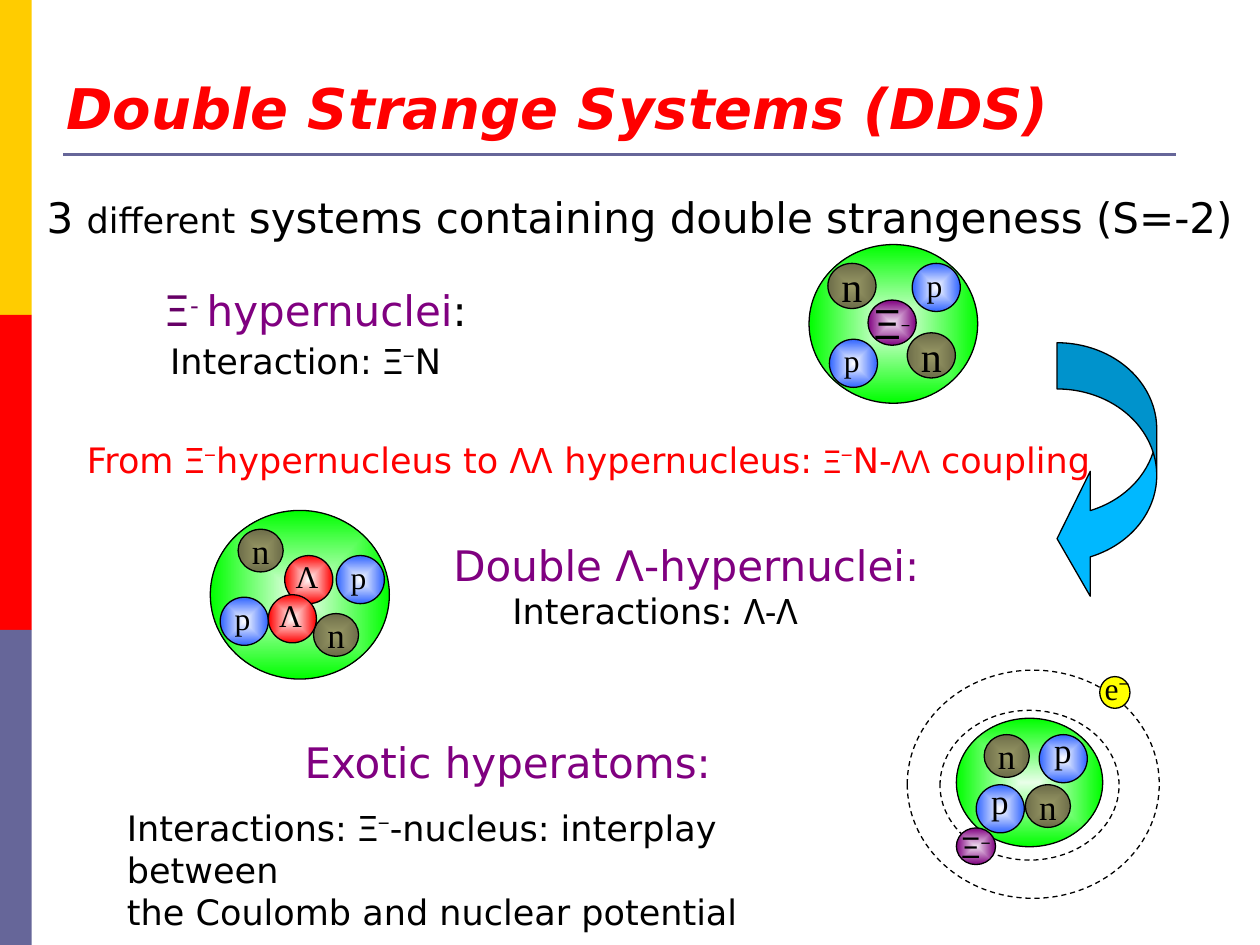
import dataclasses

import lxml.etree
import pptx
import pptx.dml.color
import pptx.enum.dml
import pptx.enum.shapes
import pptx.enum.text
import pptx.oxml.ns
import pptx.util

Cm = pptx.util.Cm
Pt = pptx.util.Pt
RGBColor = pptx.dml.color.RGBColor
SHAPE = pptx.enum.shapes.MSO_SHAPE
qn = pptx.oxml.ns.qn

BLACK = RGBColor(0x00, 0x00, 0x00)
WHITE = RGBColor(0xFF, 0xFF, 0xFF)
RED = RGBColor(0xFF, 0x00, 0x00)
GOLD = RGBColor(0xFF, 0xCC, 0x00)
SLATE = RGBColor(0x66, 0x66, 0x99)
PURPLE = RGBColor(0x80, 0x00, 0x80)
DARK_PURPLE = RGBColor(0x66, 0x00, 0x66)
SKY = RGBColor(0x00, 0xB8, 0xFF)
YELLOW = RGBColor(0xFF, 0xFF, 0x00)

# Radial fills: centre colour, edge colour, edge position in percent
NUCLEUS_FILL = (RGBColor(0xE8, 0xFF, 0xE8), RGBColor(0x00, 0xFF, 0x00), 100)
XI_FILL = (RGBColor(0xEE, 0xDC, 0xEE), PURPLE, 100)
NEUTRON_FILL = (RGBColor(0x99, 0x99, 0x66), RGBColor(0x6D, 0x6D, 0x49), 100)
PROTON_FILL = (WHITE, RGBColor(0x33, 0x66, 0xFF), 99)
LAMBDA_FILL = (WHITE, RED, 100)

SANS, NOTO, COMIC = "DejaVu Sans", "Noto Sans", "Comic Neue"
ARIAL, SERIF = "Arial", "Times New Roman"
MINUS = ("−", {"font": ARIAL, "raised": True})


@dataclasses.dataclass
class Box:
    """A region in centimetres; inner() gives a box relative to its corner."""
    left: float
    top: float
    width: float
    height: float

    def inner(self, left, top, width, height):
        return Box(self.left + left, self.top + top, width, height)

    def lengths(self):
        return [Cm(v) for v in (self.left, self.top, self.width, self.height)]


def write_text(frame, *paragraphs, centred=False, **defaults):
    """Fill a frame; each paragraph is a string or a list of strings and (text, format)."""
    for index, pieces in enumerate(paragraphs):
        paragraph = frame.add_paragraph() if index else frame.paragraphs[0]
        if centred:
            paragraph.alignment = pptx.enum.text.PP_ALIGN.CENTER
        for piece in [pieces] if isinstance(pieces, str) else pieces:
            text, changes = (piece, {}) if isinstance(piece, str) else piece
            style = {"size": 20, "font": SANS, "color": BLACK, **defaults, **changes}
            run = paragraph.add_run()
            run.text = text
            run.font.size = Pt(style["size"])
            run.font.name = style["font"]
            run.font.color.rgb = style["color"]
            run.font.bold = run.font.italic = style.get("strong", False)
            if style.get("raised"):
                run._r.get_or_add_rPr().set("baseline", "30000")


def add_text(slide, box, *paragraphs, wrap=False, **style):
    frame = slide.shapes.add_textbox(*box.lengths()).text_frame
    frame.word_wrap = wrap
    frame.auto_size = pptx.enum.text.MSO_AUTO_SIZE.SHAPE_TO_FIT_TEXT
    write_text(frame, *paragraphs, **style)


def fill_radially(shape, centre, edge, edge_position):
    properties = shape._element.spPr
    gradient = lxml.etree.Element(qn("a:gradFill"), rotWithShape="1")
    stops = lxml.etree.SubElement(gradient, qn("a:gsLst"))
    for position, color in ((0, centre), (edge_position, edge)):
        stop = lxml.etree.SubElement(stops, qn("a:gs"), pos=str(position * 1000))
        lxml.etree.SubElement(stop, qn("a:srgbClr"), val=str(color))
    shading = lxml.etree.SubElement(gradient, qn("a:path"), {"path": "shape"})
    lxml.etree.SubElement(shading, qn("a:fillToRect"),
                          {side: "50000" for side in "ltrb"})
    properties.find(qn("a:prstGeom")).addnext(gradient)


def add_shape(slide, box, fill=None, kind=SHAPE.OVAL, outlined=True):
    """Add a shape whose fill is a colour, a radial fill or None."""
    shape = slide.shapes.add_shape(kind, *box.lengths())
    shape.shadow.inherit = False
    if fill is None:
        shape.fill.background()
    elif isinstance(fill, RGBColor):
        shape.fill.solid()
        shape.fill.fore_color.rgb = fill
    else:
        fill_radially(shape, *fill)
    if outlined:
        shape.line.color.rgb = BLACK
        shape.line.width = Pt(0.75)
    else:
        shape.line.fill.background()
    return shape


def add_particle(slide, box, fill, *pieces, **style):
    frame = add_shape(slide, box, fill).text_frame
    frame.word_wrap = False
    frame.vertical_anchor = pptx.enum.text.MSO_ANCHOR.MIDDLE
    write_text(frame, list(pieces), centred=True, **style)


def add_neutrons(slide, region, places, width=0.91, height=0.86, size=20):
    for left, top in places:
        add_particle(slide, region.inner(left, top, width, height), NEUTRON_FILL,
                     "n", size=size, font=SERIF)


def add_labelled_balls(slide, region, places, fill, letter, label, size=18):
    """Add balls with a letter; label is the text box relative to each ball."""
    for left, top in places:
        ball = region.inner(left, top, 0.97, 0.97)
        add_shape(slide, ball, fill)
        add_text(slide, ball.inner(*label), letter, size=size, font=SERIF)


def add_orbit(slide, box):
    add_shape(slide, box).line.dash_style = pptx.enum.dml.MSO_LINE.DASH


def draw_frame(slide, box):
    stripe_height = box.height / 3
    for index, color in enumerate((GOLD, RED, SLATE)):
        stripe = box.inner(0, index * stripe_height, 0.64, stripe_height)
        add_shape(slide, stripe, color, SHAPE.RECTANGLE, outlined=False)
    rule = slide.shapes.add_connector(pptx.enum.shapes.MSO_CONNECTOR.STRAIGHT,
                                      Cm(1.27), Cm(3.12), Cm(23.7), Cm(3.12))
    rule.line.color.rgb = SLATE
    rule.line.width = Pt(1.5)
    lxml.etree.SubElement(rule._element.spPr, qn("a:effectLst"))


def draw_introduction(slide, box):
    add_text(slide, box.inner(0.4, 0, 23.06, 3.18), "Double Strange Systems (DDS)",
             wrap=True, size=32, color=RED, strong=True)
    add_text(slide, box.inner(0, 2.38, 24.87, 1.27),
             ["3 ", ("different", {"size": 20}),
              " systems containing double strangeness (S=-2)"], size=24)


def draw_coupling(slide, box):
    add_text(slide, box.inner(0, 1.8, 21.41, 1.12),
             ["From ", ("Ξ", {"font": NOTO}), MINUS, "hypernucleus to ",
              ("ΛΛ ", {"font": COMIC}), "hypernucleus: ",
              ("Ξ", {"font": NOTO, "size": 18}), MINUS, "N-",
              ("ΛΛ", {"font": COMIC, "size": 18}), " coupling"], color=RED)
    arrow = add_shape(slide, box.inner(19.81, 0, 2.01, 5.21), SKY, SHAPE.CURVED_LEFT_ARROW)
    for index, value in enumerate((0.464, 1.253, 0.333)):
        arrow.adjustments[index] = value


def draw_xi_hypernuclei(slide, box):
    add_text(slide, box.inner(0, 0.69, 6.86, 1.27),
             [("Ξ", {"color": DARK_PURPLE}),
              ("- ", {"color": DARK_PURPLE, "raised": True}),
              "hypernuclei", (":", {"color": BLACK})], size=24, color=PURPLE)
    add_text(slide, box.inner(0.13, 1.78, 6.1, 1.12),
             ["Interaction: ", ("Ξ", {"font": COMIC}), MINUS, "N"])
    add_shape(slide, box.inner(13.26, 0, 3.4, 3.2), NUCLEUS_FILL)
    add_particle(slide, box.inner(14.45, 1.12, 0.97, 0.91), XI_FILL, "Ξ",
                 ("−", {"size": 16, "raised": True}), size=24, font=ARIAL)
    add_neutrons(slide, box, [(13.64, 0.38), (15.24, 1.78)], 0.97, 0.91, size=24)
    add_labelled_balls(slide, box, [(15.34, 0.38), (13.67, 1.91)], PROTON_FILL,
                       "p", (0.04, -0.08, 0.86, 1.12))


def draw_double_lambda_hypernuclei(slide, box):
    add_text(slide, box.inner(4.65, 0.46, 10.13, 1.27), "Double Λ-hypernuclei:",
             size=24, color=PURPLE)
    add_text(slide, box.inner(5.84, 1.47, 6.48, 1.12),
             ["Interactions: ", ("Λ-Λ", {"font": NOTO})])
    add_shape(slide, box.inner(0, 0, 3.61, 3.4), NUCLEUS_FILL)
    add_neutrons(slide, box, [(0.56, 0.38), (2.08, 2.08)])
    add_labelled_balls(slide, box, [(2.54, 0.91), (0.2, 1.75)], PROTON_FILL,
                       "p", (0.04, -0.08, 0.86, 1.12))
    add_labelled_balls(slide, box, [(1.5, 0.91), (1.17, 1.7)], LAMBDA_FILL,
                       "Λ", (-0.03, -0.09, 1.02, 1.12))


def draw_exotic_hyperatoms(slide, box):
    add_text(slide, box.inner(3.58, 1.22, 8.84, 1.27), "Exotic hyperatoms:",
             size=24, color=PURPLE)
    add_text(slide, box.inner(0, 2.62, 14.94, 1.96),
             ["Interactions: ", ("Ξ", {"font": NOTO}), MINUS,
              "-nucleus: interplay between"],
             "the Coulomb and nuclear potential", wrap=True)
    add_shape(slide, box.inner(16.97, 0.97, 2.95, 2.59), NUCLEUS_FILL)
    add_orbit(slide, box.inner(16.64, 0.81, 3.61, 3.02))
    add_particle(slide, box.inner(16.97, 3.18, 0.79, 0.74), XI_FILL,
                 "Ξ", MINUS, size=17, font=ARIAL)
    add_orbit(slide, box.inner(15.98, 0, 5.08, 4.6))
    add_labelled_balls(slide, box, [(18.64, 1.3), (17.37, 2.31)], PROTON_FILL,
                       "p", (0.05, -0.24, 0.86, 1.12), size=20)
    add_neutrons(slide, box, [(17.53, 1.3), (18.36, 2.31)])
    add_shape(slide, box.inner(19.86, 0.13, 0.61, 0.64), YELLOW)
    add_text(slide, box.inner(19.71, -0.15, 1.09, 1.12), ["e", MINUS],
             size=18, font=SERIF)


def main():
    presentation = pptx.Presentation()
    presentation.slide_width, presentation.slide_height = Cm(25.4), Cm(19.05)
    slide = presentation.slides.add_slide(presentation.slide_layouts[6])
    draw_frame(slide, Box(0, 0, 25.4, 19.05))
    draw_introduction(slide, Box(0.69, 1.35, 24.71, 3.65))
    draw_coupling(slide, Box(1.5, 6.91, 21.82, 5.21))
    draw_xi_hypernuclei(slide, Box(3.05, 4.93, 16.66, 3.2))
    draw_double_lambda_hypernuclei(slide, Box(4.24, 10.29, 14.78, 3.4))
    draw_exotic_hyperatoms(slide, Box(2.31, 13.51, 21.06, 4.6))
    presentation.save("out.pptx")


if __name__ == "__main__":
    main()
